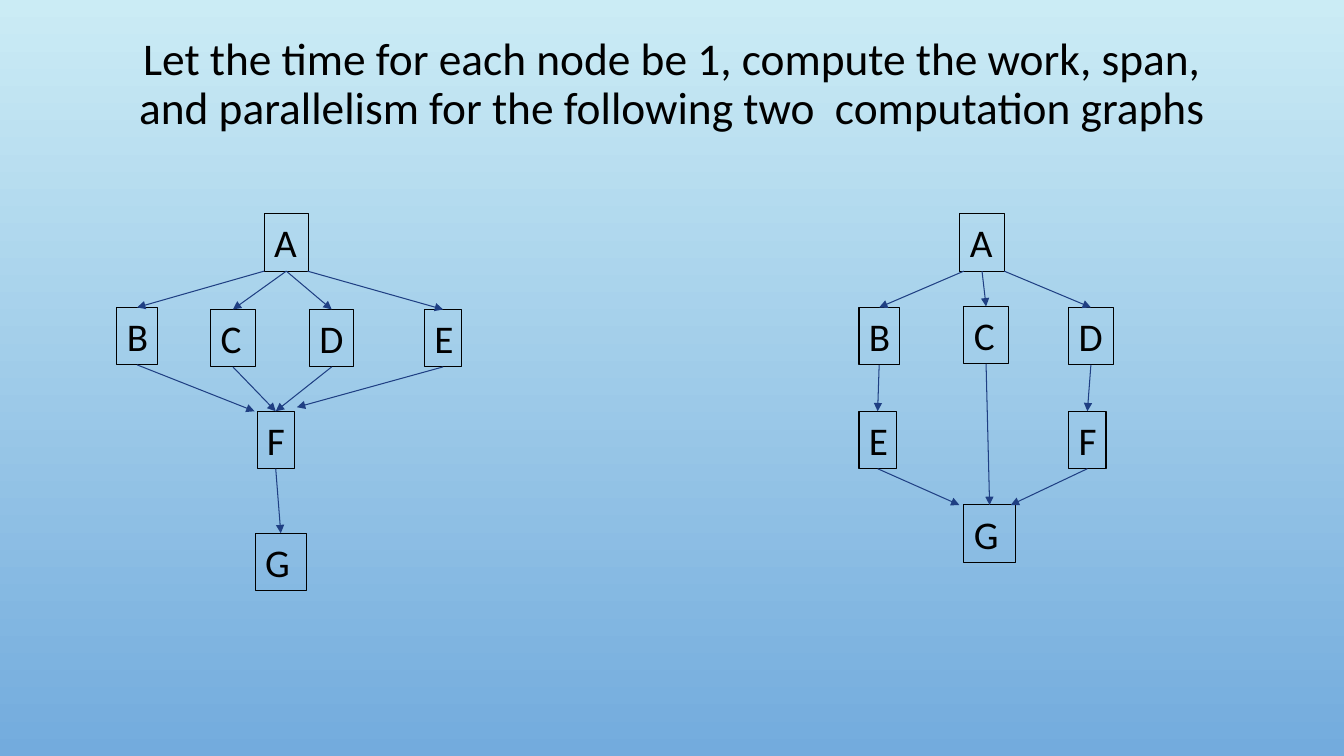
from lxml import etree
from pptx import Presentation
from pptx import util as u
from pptx.dml import color
from pptx.enum import shapes, text
from pptx.oxml import ns

COLORS = {"sky": "CBECF5", "blue": "73ABDD", "ink": "000000", "arrow": "1F3F83"}
FONT = "Calibri"
NODE_WIDTHS = {"A": 0.44, "B": 0.4, "C": 0.44, "D": 0.44, "E": 0.37, "F": 0.37, "G": 0.51}
NODE_HEIGHT = 0.57

LEFT_NODES = {"A": (1.46, 0), "B": (0, 0.93), "C": (0.93, 0.95), "D": (1.91, 0.95),
              "E": (3.05, 0.95), "F": (1.39, 1.96), "G": (1.37, 3.17)}
LEFT_EDGES = [("A", "B", -0.22, 0), ("A", "C", 0, 0), ("A", "D", 0, 0), ("A", "E", 0.21, 0),
              ("B", "F", 0, -0.21), ("C", "F", 0, 0), ("D", "F", 0, 0), ("E", "F", 0, 0.21, -0.04),
              ("F", "G", 0, 0)]
RIGHT_NODES = {"A": (1, 0), "B": (0, 0.93), "C": (1.04, 0.92), "D": (2.08, 0.93),
               "E": (0, 1.96), "F": (2.08, 1.96), "G": (1.04, 2.89)}
RIGHT_EDGES = [("A", "B", -0.18, 0), ("A", "D", 0.22, 0), ("A", "C", 0, 0), ("B", "E", 0, 0),
               ("D", "F", 0, 0), ("C", "G", 0, 0), ("E", "G", 0, -0.3), ("F", "G", 0, 0.21)]


def rgb(name):
    """Return the named colour."""
    return color.RGBColor.from_string(COLORS[name])


def add_text(slide, words, size, left, top, width, height):
    """Add a wrapped text box in the slide's font."""
    shape = slide.shapes.add_textbox(*map(u.Inches, (left, top, width, height)))
    shape.text_frame.word_wrap = True
    shape.text_frame.text = words
    font = shape.text_frame.paragraphs[0].runs[0].font
    font.name, font.size = FONT, u.Pt(size)
    font.color.rgb = rgb("ink")
    return shape


def paint_background(slide):
    """Fill the slide with a top-to-bottom gradient."""
    fill = slide.background.fill
    fill.gradient()
    fill.gradient_angle = 270
    for stop, name in zip(fill.gradient_stops, ("sky", "blue")):
        stop.color.rgb = rgb(name)


def add_title(slide, words, left, top, width, height):
    """Add the centred title."""
    shape = add_text(slide, words, 32.4, left, top, width, height)
    shape.text_frame.vertical_anchor = text.MSO_ANCHOR.MIDDLE
    paragraph = shape.text_frame.paragraphs[0]
    paragraph.alignment = text.PP_ALIGN.CENTER
    paragraph.line_spacing = 0.9


def add_node(slide, name, left, top):
    """Add one outlined, lettered node."""
    shape = add_text(slide, name, 28, left, top, NODE_WIDTHS[name], NODE_HEIGHT)
    shape.text_frame.margin_right = 0
    shape.line.color.rgb = rgb("ink")
    shape.line.width = u.Pt(0.75)


def add_arrow(slide, *points):
    """Add an arrow between two points given as x, y, x, y."""
    connector = slide.shapes.add_connector(
        shapes.MSO_CONNECTOR.STRAIGHT, *map(u.Inches, points))
    connector.line.color.rgb = rgb("arrow")
    connector.line.width = u.Pt(0.75)
    etree.SubElement(connector.line._get_or_add_ln(), ns.qn("a:tailEnd"), type="triangle")
    etree.SubElement(connector._element.spPr, ns.qn("a:effectLst"))


def add_graph(slide, nodes, edges, left, top):
    """Add a computation graph with its top-left corner at the given place."""
    for name, (x, y) in nodes.items():
        add_node(slide, name, left + x, top + y)
    centres = {name: left + x + NODE_WIDTHS[name] / 2 for name, (x, y) in nodes.items()}
    for source, target, start_shift, end_shift, *lift in edges:
        add_arrow(slide,
                  centres[source] + start_shift, top + nodes[source][1] + NODE_HEIGHT,
                  centres[target] + end_shift, top + nodes[target][1] + sum(lift))


def main():
    """Build and save the presentation."""
    presentation = Presentation()
    presentation.slide_width = u.Inches(13.33)
    presentation.slide_height = u.Inches(7.5)
    slide = presentation.slides.add_slide(presentation.slide_layouts[6])
    paint_background(slide)
    add_title(slide, "Let the time for each node be 1, compute the work, span, "
              "and parallelism for the following two  computation graphs", 1, 0.32, 11.33, 1.05)
    add_graph(slide, LEFT_NODES, LEFT_EDGES, 1.16, 2.12)
    add_graph(slide, RIGHT_NODES, RIGHT_EDGES, 8.52, 2.12)
    presentation.save("out.pptx")


if __name__ == "__main__":
    main()
